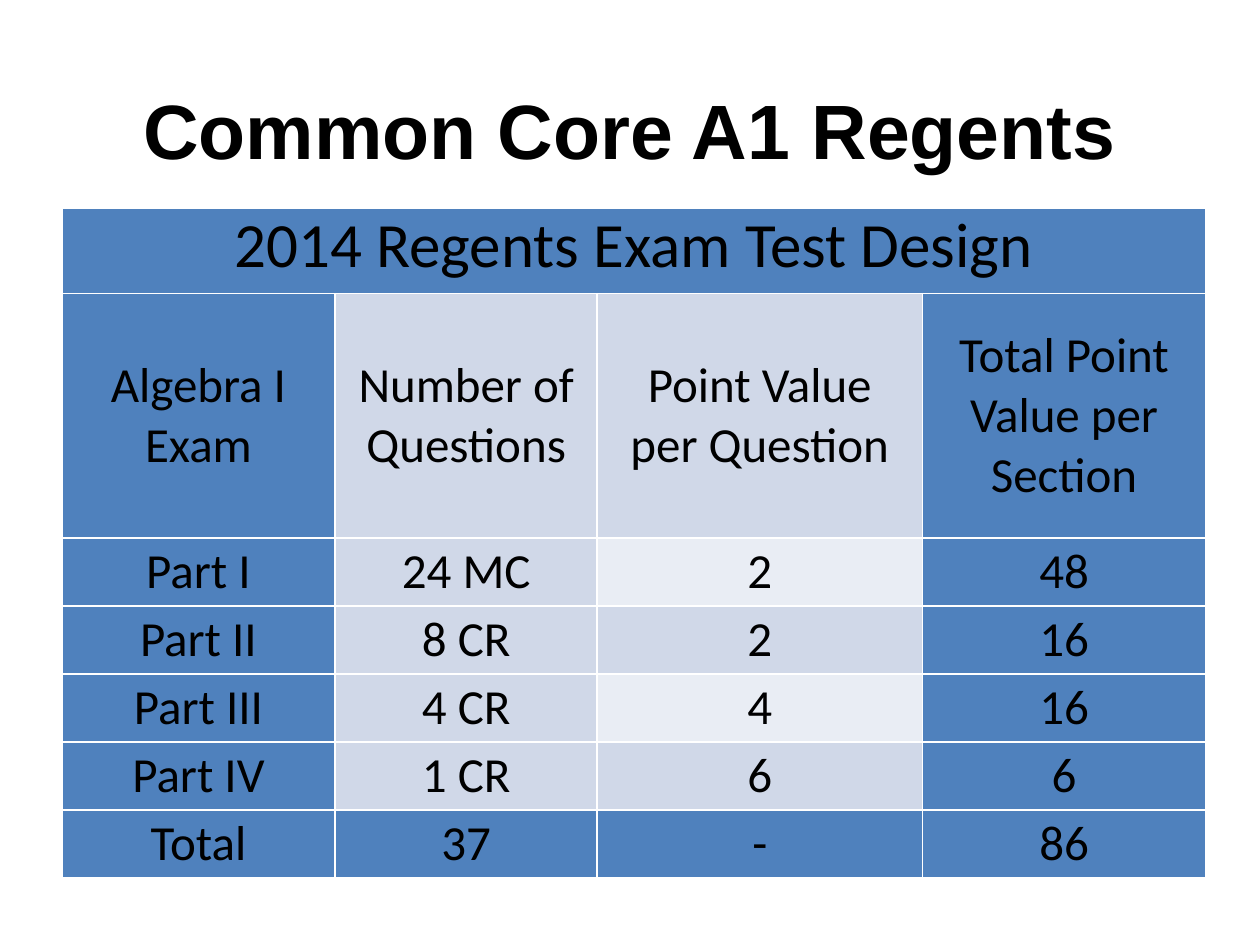
"""Build the Common Core A1 Regents test design slide."""
from lxml.etree import SubElement
from pptx import Presentation
from pptx.dml.color import RGBColor
from pptx.enum.text import MSO_ANCHOR as Anchor, PP_ALIGN as Align
from pptx.oxml.ns import qn
from pptx.util import Inches, Pt

BLACK = RGBColor(0x00, 0x00, 0x00)
WHITE = RGBColor(0xFF, 0xFF, 0xFF)
BLUE = RGBColor(0x4F, 0x81, 0xBD)
BAND = RGBColor(0xD0, 0xD8, 0xE8)
PALE = RGBColor(0xE9, 0xED, 0xF4)

COL_WIDTHS = [2.17, 2.08, 2.58, 2.25]
ROW_HEIGHTS = [0.68, 1.94] + [0.54] * 5
HEADING = "2014 Regents Exam Test Design"
ROWS = [
    ["Algebra I Exam", "Number of Questions", "Point Value\nper Question",
     "Total Point Value per Section"],
    ["Part I", "24 MC", "2", "48"],
    ["Part II", "8 CR", "2", "16"],
    ["Part III", "4 CR", "4", "16"],
    ["Part IV", "1 CR", "6", "6"],
    ["Total", "37", "-", "86"],
]


def set_text(tf, text, size, font, bold=False):
    tf.text = text
    for p in tf.paragraphs:
        p.alignment = Align.CENTER
        p.font.size = Pt(size)
        p.font.name = font
        p.font.bold = bold
        p.font.color.rgb = BLACK


def add_title(slide, text):
    sp = slide.shapes.add_textbox(Inches(0.5), Inches(0.4), Inches(9), Inches(1.25))
    tf = sp.text_frame
    tf.word_wrap = True
    tf.vertical_anchor = Anchor.MIDDLE
    set_text(tf, text, 44, "Arial", bold=True)


def set_borders(cell):
    tc_pr = cell._tc.get_or_add_tcPr()
    for side in ("a:lnL", "a:lnR", "a:lnT", "a:lnB"):
        ln = SubElement(tc_pr, qn(side), w=str(Pt(1)))
        fill = SubElement(ln, qn("a:solidFill"))
        SubElement(fill, qn("a:srgbClr"), val=str(WHITE))


def style_cell(cell, color):
    set_borders(cell)
    cell.fill.solid()
    cell.fill.fore_color.rgb = color
    cell.margin_left = cell.margin_right = Inches(0.07)
    cell.margin_top = cell.margin_bottom = 0


def cell_color(row, col):
    if row in (0, len(ROWS)) or col in (0, len(COL_WIDTHS) - 1):
        return BLUE
    return PALE if col == 2 and row % 2 == 0 else BAND


def add_design_table(slide):
    frame = slide.shapes.add_table(
        len(ROW_HEIGHTS), len(COL_WIDTHS), Inches(0.49), Inches(1.65),
        Inches(sum(COL_WIDTHS)), Inches(sum(ROW_HEIGHTS)))
    table = frame.table
    for column, width in zip(table.columns, COL_WIDTHS):
        column.width = Inches(width)
    for r, height in enumerate(ROW_HEIGHTS):
        table.rows[r].height = Inches(height)
        for c in range(len(COL_WIDTHS)):
            style_cell(table.cell(r, c), cell_color(r, c))
    heading = table.cell(0, 0)
    heading.merge(table.cell(0, len(COL_WIDTHS) - 1))
    set_text(heading.text_frame, HEADING, 36, "Calibri")
    for r, values in enumerate(ROWS, start=1):
        for c, value in enumerate(values):
            cell = table.cell(r, c)
            cell.vertical_anchor = Anchor.MIDDLE
            set_text(cell.text_frame, value, 28, "Calibri")


def main():
    prs = Presentation()
    prs.slide_width, prs.slide_height = Inches(10), Inches(7.5)
    slide = prs.slides.add_slide(prs.slide_layouts[6])
    add_title(slide, "Common Core A1 Regents")
    add_design_table(slide)
    prs.save("out.pptx")


if __name__ == "__main__":
    main()
